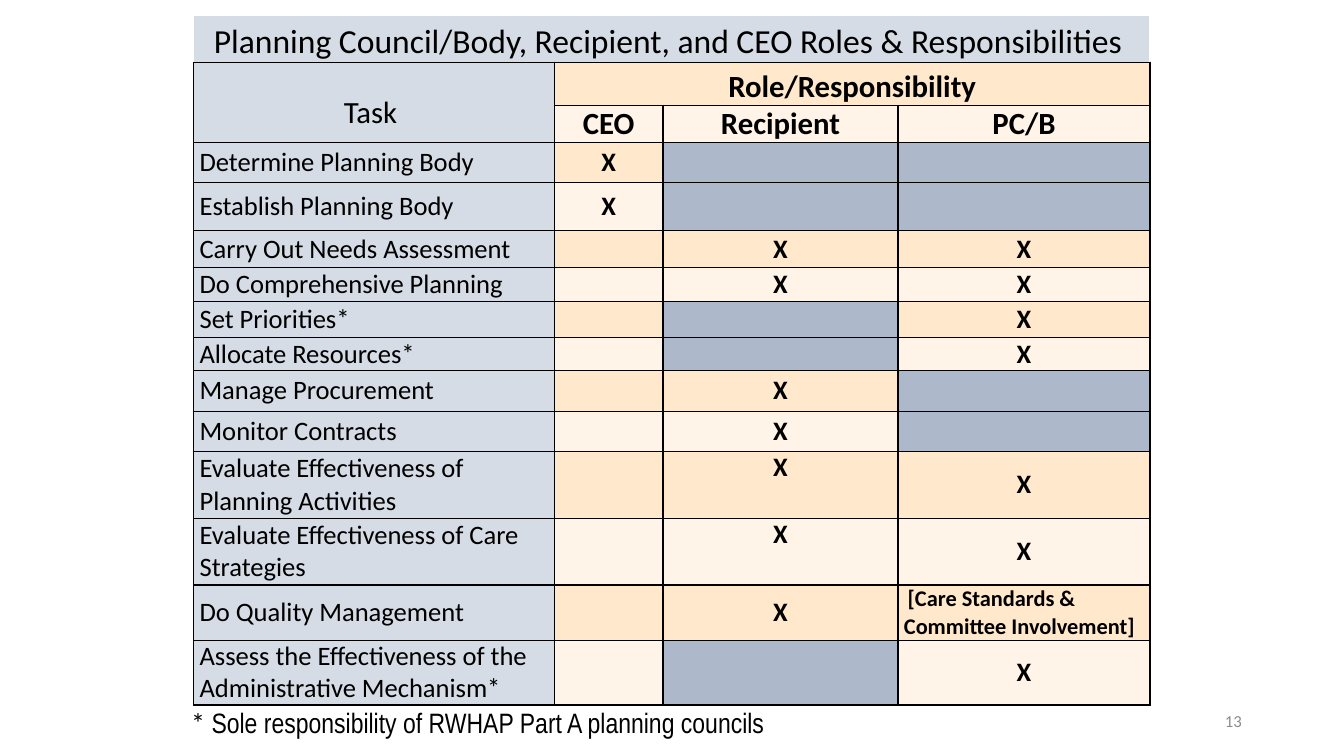
from lxml import etree
from pptx import Presentation
from pptx import util as u
from pptx.dml.color import RGBColor
from pptx.enum import text
from pptx.oxml.ns import qn

COLORS = {
    "black": "000000", "white": "FFFFFF", "grey": "8C8C8C", "red": "FF0000",
    "task": "D6DCE5", "blocked": "ADB9CA", "dark": "FFE8CC", "light": "FFF4E7",
}
LEFT, CENTER, RIGHT = text.PP_ALIGN.LEFT, text.PP_ALIGN.CENTER, text.PP_ALIGN.RIGHT
TOP, MIDDLE = text.MSO_ANCHOR.TOP, text.MSO_ANCHOR.MIDDLE


def write(frame, words, size=19, bold=False, color="black", font="Calibri",
          align=LEFT, anchor=MIDDLE, spacing=None):
    frame.vertical_anchor = anchor
    paragraph = frame.paragraphs[0]
    paragraph.alignment = align
    if spacing:
        paragraph.line_spacing = spacing
    run = paragraph.add_run()
    run.text = words
    run.font.size = u.Pt(size)
    run.font.bold = bold
    run.font.name = font
    run.font.color.rgb = RGBColor.from_string(COLORS[color])


def dress(cell, fill, edges="black"):
    cell.margin_left = cell.margin_right = u.Cm(0.15)
    cell.margin_top = cell.margin_bottom = 0
    props = cell._tc.get_or_add_tcPr()
    for side in ("lnL", "lnR", "lnT", "lnB"):
        edge = etree.SubElement(props, qn("a:" + side), w=str(u.Pt(1)))
        solid = etree.SubElement(edge, qn("a:solidFill"))
        shade = "black" if side == "lnB" else edges
        etree.SubElement(solid, qn("a:srgbClr"), val=COLORS[shade])
    cell.fill.solid()
    cell.fill.fore_color.rgb = RGBColor.from_string(COLORS[fill])


tasks = [
    ("Determine Planning Body", "X##"),
    ("Establish Planning Body", "X##"),
    ("Carry Out Needs Assessment", ".XX"),
    ("Do Comprehensive Planning", ".XX"),
    ("Set Priorities*", ".#X"),
    ("Allocate Resources*", ".#X"),
    ("Manage Procurement", ".X#"),
    ("Monitor Contracts", ".X#"),
    ("Evaluate Effectiveness of Planning Activities", ".XX"),
    ("Evaluate Effectiveness of Care Strategies", ".XX"),
    ("Do Quality Management", ".X."),
    ("Assess the Effectiveness of the Administrative Mechanism*", ".#X"),
]
widths = [9.09, 2.74, 5.92, 6.35]
heights = [1.14, 1.04, 0.91, 0.99, 1.22, 0.94, 0.84, 0.91, 0.84, 1.02, 1.02,
           1.68, 1.68, 1.4, 1.57]

deck = Presentation()
deck.slide_width, deck.slide_height = u.Cm(33.87), u.Cm(19.05)
slide = deck.slides.add_slide(deck.slide_layouts[6])

roles = slide.shapes.add_table(
    len(heights), len(widths), u.Cm(4.88), u.Cm(0.38),
    u.Cm(sum(widths)), u.Cm(sum(heights))).table
for column, width in zip(roles.columns, widths):
    column.width = u.Cm(width)
for row, height in zip(roles.rows, heights):
    row.height = u.Cm(height)

for col in range(4):
    dress(roles.cell(0, col), "task", "white")
    dress(roles.cell(1, col), "dark" if col else "task")
    dress(roles.cell(2, col), "light" if col else "task")
roles.cell(0, 0).merge(roles.cell(0, 3))
roles.cell(1, 0).merge(roles.cell(2, 0))
roles.cell(1, 1).merge(roles.cell(1, 3))

write(roles.cell(0, 0).text_frame,
      "Planning Council/Body, Recipient, and CEO Roles & Responsibilities ",
      size=24, align=CENTER, spacing=1.15)
write(roles.cell(1, 0).text_frame, "Task ", size=22, align=CENTER)
roles.cell(1, 0).margin_top = u.Cm(0.8)
write(roles.cell(1, 1).text_frame, "Role/Responsibility", size=22, bold=True,
      align=CENTER, spacing=1.15)
for col, role in enumerate(["CEO", "Recipient", "PC/B"], 1):
    write(roles.cell(2, col).text_frame, role, size=22, bold=True, align=CENTER)
for row in range(3):
    for col in range(4):
        roles.cell(row, col).vertical_anchor = TOP

for row, (task, marks) in enumerate(tasks, 3):
    dress(roles.cell(row, 0), "task")
    roles.cell(row, 0).vertical_anchor = MIDDLE
    write(roles.cell(row, 0).text_frame, task)
    band = "dark" if row % 2 else "light"
    for col, mark in enumerate(marks, 1):
        cell = roles.cell(row, col)
        dress(cell, "blocked" if mark == "#" else band)
        if mark == "X":
            write(cell.text_frame, "X", bold=True, align=CENTER)
            raised = col == 2 and task.startswith("Evaluate")
            cell.vertical_anchor = TOP if raised else MIDDLE

involvement = roles.cell(13, 3)
write(involvement.text_frame, " ", size=12, bold=True, color="red")
write(involvement.text_frame, "[Care Standards & Committee Involvement]",
      size=16, bold=True)
involvement.vertical_anchor = MIDDLE

footnote = slide.shapes.add_textbox(
    u.Cm(4.57), u.Cm(17.65), u.Cm(15.06), u.Cm(1.12)).text_frame
footnote.word_wrap = False
write(footnote, "* ", size=20, anchor=TOP)
write(footnote, "Sole responsibility of RWHAP Part A planning councils",
      size=20, font="Arial Narrow", anchor=TOP)

page_number = slide.shapes.add_textbox(
    u.Cm(23.93), u.Cm(17.65), u.Cm(7.62), u.Cm(1.02)).text_frame
page_number.word_wrap = True
write(page_number, "13", size=12, color="grey", align=RIGHT)

deck.save("out.pptx")
